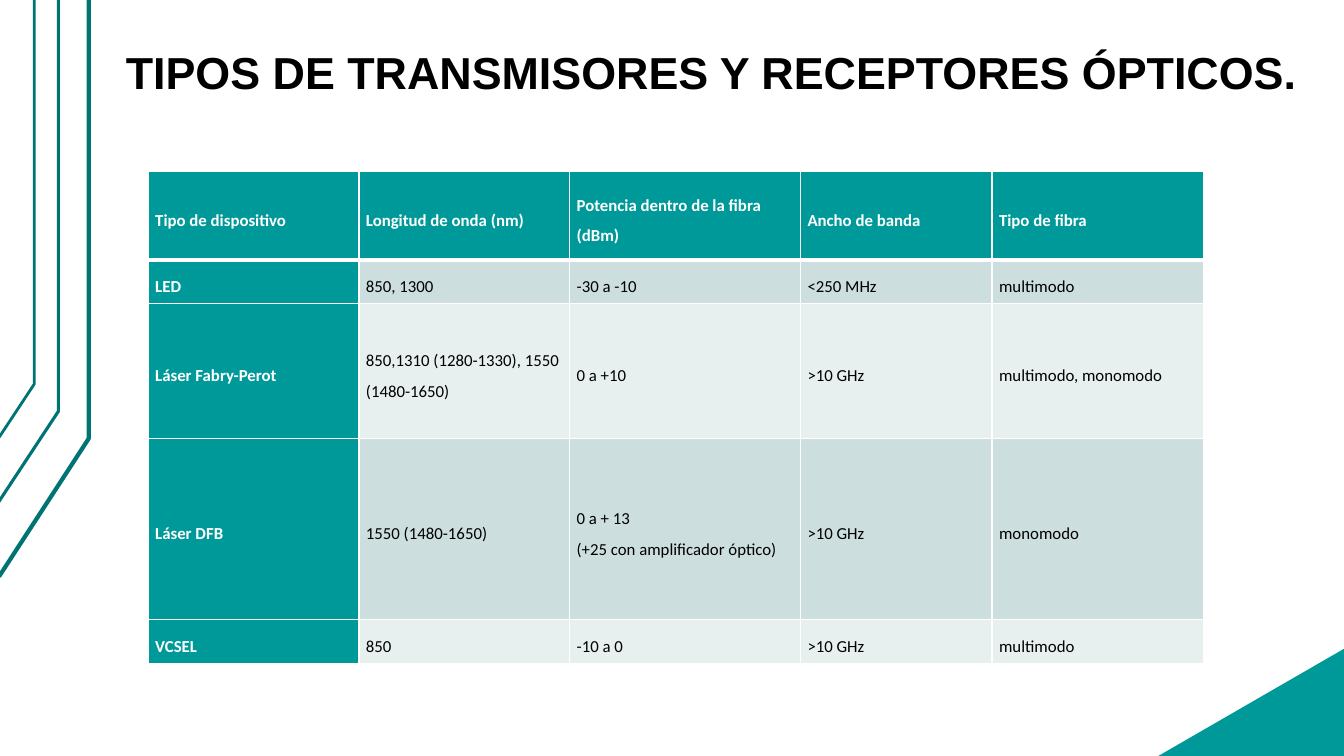
"""Builds the slide that compares types of optical transmitters and receivers."""
from dataclasses import dataclass

from lxml import etree
from pptx import Presentation
from pptx.dml.color import RGBColor
from pptx.enum.text import MSO_ANCHOR, MSO_AUTO_SIZE
from pptx.oxml.ns import qn
from pptx.util import Inches, Pt

MIDDLE = MSO_ANCHOR.MIDDLE
GROW = MSO_AUTO_SIZE.SHAPE_TO_FIT_TEXT

TITLE = "TIPOS DE TRANSMISORES Y RECEPTORES ÓPTICOS."
DEVICES = [
    ("Tipo de dispositivo", "Longitud de onda (nm)", "Potencia dentro de la fibra (dBm)",
     "Ancho de banda", "Tipo de fibra"),
    ("LED", "850, 1300", "-30 a -10", "<250 MHz", "multimodo"),
    ("Láser Fabry-Perot", "850,1310 (1280-1330), 1550 (1480-1650)", "0 a +10",
     ">10 GHz", "multimodo, monomodo"),
    ("Láser DFB", "1550 (1480-1650)", "0 a + 13\n(+25 con amplificador óptico)",
     ">10 GHz", "monomodo"),
    ("VCSEL", "850", "-10 a 0", ">10 GHz", "multimodo"),
]

SLIDE_W, SLIDE_H = 13.33, 7.5
TITLE_BOX = (1.15, 0.13, 11.97, 0.91)
TABLE_LEFT, TABLE_TOP = 1.47, 1.7
COLUMNS = (2.09, 2.09, 2.29, 1.9, 2.1)
ROWS = (0.88, 0.43, 1.34, 1.8, 0.43)
CELL_INSET = 0.07
RAILS = [
    dict(start_x=-0.01, end_y=5.72, bend_x=0.88, bend_y=4.35, weight=3),
    dict(start_x=-0.02, end_y=4.99, bend_x=0.58, bend_y=4.08, weight=2.25),
    dict(start_x=-0.01, end_y=4.34, bend_x=0.34, bend_y=3.81, weight=2),
]
CORNER_START, CORNER_ANGLE = 0.93, 60


@dataclass(frozen=True)
class Theme:
    teal: str = "009999"
    rail: str = "007373"
    bands: tuple = ("E7EFEF", "CCDEDE")
    white: str = "FFFFFF"
    black: str = "000000"
    title_font: str = "Arial"
    body_font: str = "Calibri"
    title_size: int = 32
    body_size: int = 12
    grid_line: int = 1
    header_line: int = 3


THEME = Theme()


def rgb(color):
    return RGBColor.from_string(color)


def write(frame, text, *, font, size, color, bold=False):
    for index, line in enumerate(text.split("\n")):
        paragraph = frame.add_paragraph() if index else frame.paragraphs[0]
        paragraph.line_spacing = 1.5
        run = paragraph.add_run()
        run.text = line
        run.font.name, run.font.size = font, Pt(size)
        run.font.bold, run.font.color.rgb = bold, rgb(color)


def paint_background(slide):
    fill = slide.background.fill
    fill.gradient()
    fill.gradient_angle = 360 - CORNER_ANGLE
    for stop, color in zip(fill.gradient_stops, (THEME.white, THEME.teal)):
        stop.position = CORNER_START
        stop.color.rgb = rgb(color)


def draw_rails(slide):
    rails = slide.shapes.add_group_shape().shapes
    for rail in RAILS:
        outline = rails.build_freeform(
            Inches(rail["start_x"]), Inches(rail["end_y"]), scale=1.0)
        bend_x = Inches(rail["bend_x"])
        outline.add_line_segments(
            [(bend_x, Inches(rail["bend_y"])), (bend_x, 0)], close=False)
        shape = outline.convert_to_shape()
        shape.shadow.inherit = False
        shape.fill.background()
        shape.line.color.rgb = rgb(THEME.rail)
        shape.line.width = Pt(rail["weight"])


def add_title(slide):
    frame = slide.shapes.add_textbox(*map(Inches, TITLE_BOX)).text_frame
    frame.word_wrap = True
    frame.auto_size = GROW
    write(frame, TITLE, font=THEME.title_font, size=THEME.title_size,
          color=THEME.black, bold=True)


def add_borders(cell, weights):
    properties = cell._tc.get_or_add_tcPr()
    for side, weight in weights.items():
        line = etree.SubElement(properties, qn(f"a:ln{side}"), w=str(Pt(weight)))
        fill = etree.SubElement(line, qn("a:solidFill"))
        etree.SubElement(fill, qn("a:srgbClr"), val=THEME.white)


def add_device_table(slide):
    table = slide.shapes.add_table(
        len(ROWS), len(COLUMNS), Inches(TABLE_LEFT), Inches(TABLE_TOP),
        Inches(sum(COLUMNS)), Inches(sum(ROWS))).table
    table.first_col = True
    for column, width in zip(table.columns, COLUMNS):
        column.width = Inches(width)
    for row, height in zip(table.rows, ROWS):
        row.height = Inches(height)
    for r, device in enumerate(DEVICES):
        weights = dict.fromkeys("LRTB", THEME.grid_line)
        if r < 2:
            weights["TB"[r == 0]] = THEME.header_line
        for c, text in enumerate(device):
            heading = r == 0 or c == 0
            cell = table.cell(r, c)
            add_borders(cell, weights)
            cell.fill.solid()
            cell.fill.fore_color.rgb = rgb(THEME.teal if heading else THEME.bands[r % 2])
            cell.vertical_anchor = MIDDLE
            cell.margin_left = cell.margin_right = Inches(CELL_INSET)
            cell.margin_top = cell.margin_bottom = 0
            write(cell.text_frame, text, font=THEME.body_font, size=THEME.body_size,
                  color=THEME.white if heading else THEME.black, bold=heading)


def main():
    deck = Presentation()
    deck.slide_width, deck.slide_height = Inches(SLIDE_W), Inches(SLIDE_H)
    slide = deck.slides.add_slide(deck.slide_layouts[6])
    paint_background(slide)
    draw_rails(slide)
    add_title(slide)
    add_device_table(slide)
    deck.save("out.pptx")


if __name__ == "__main__":
    main()
